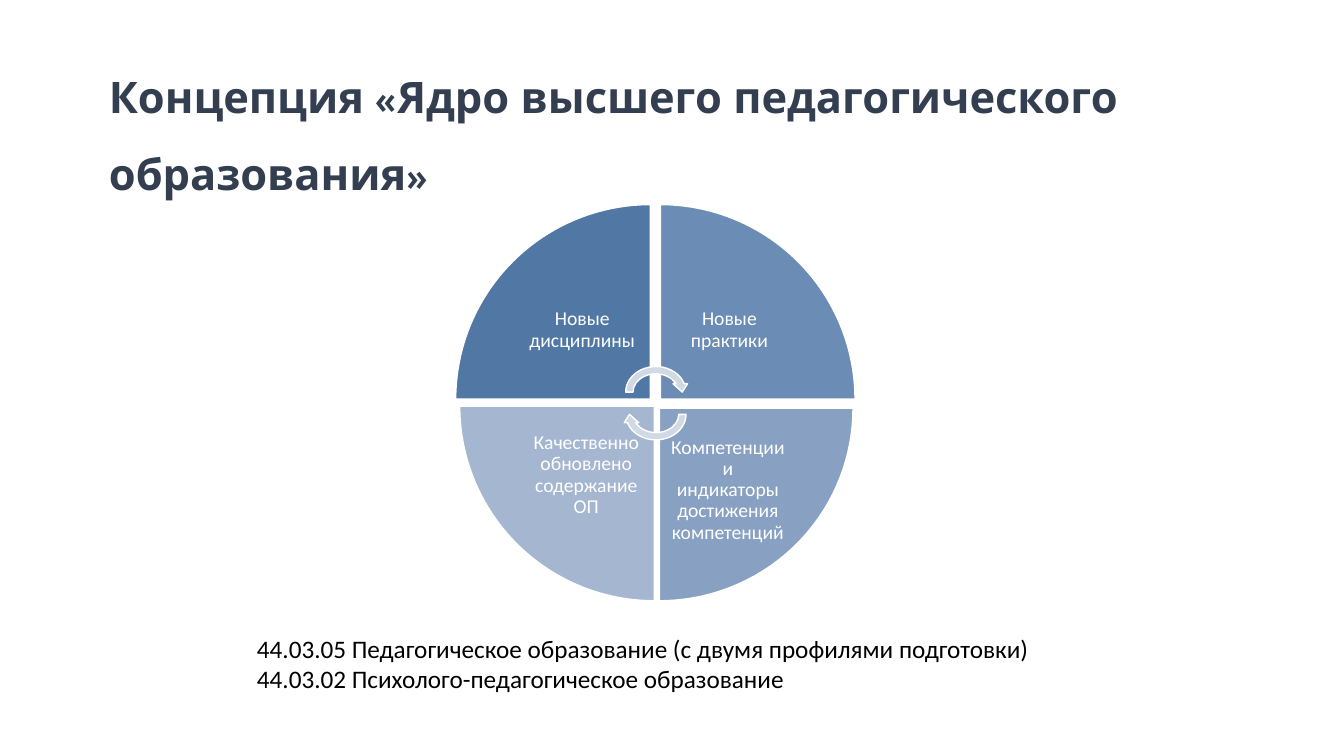
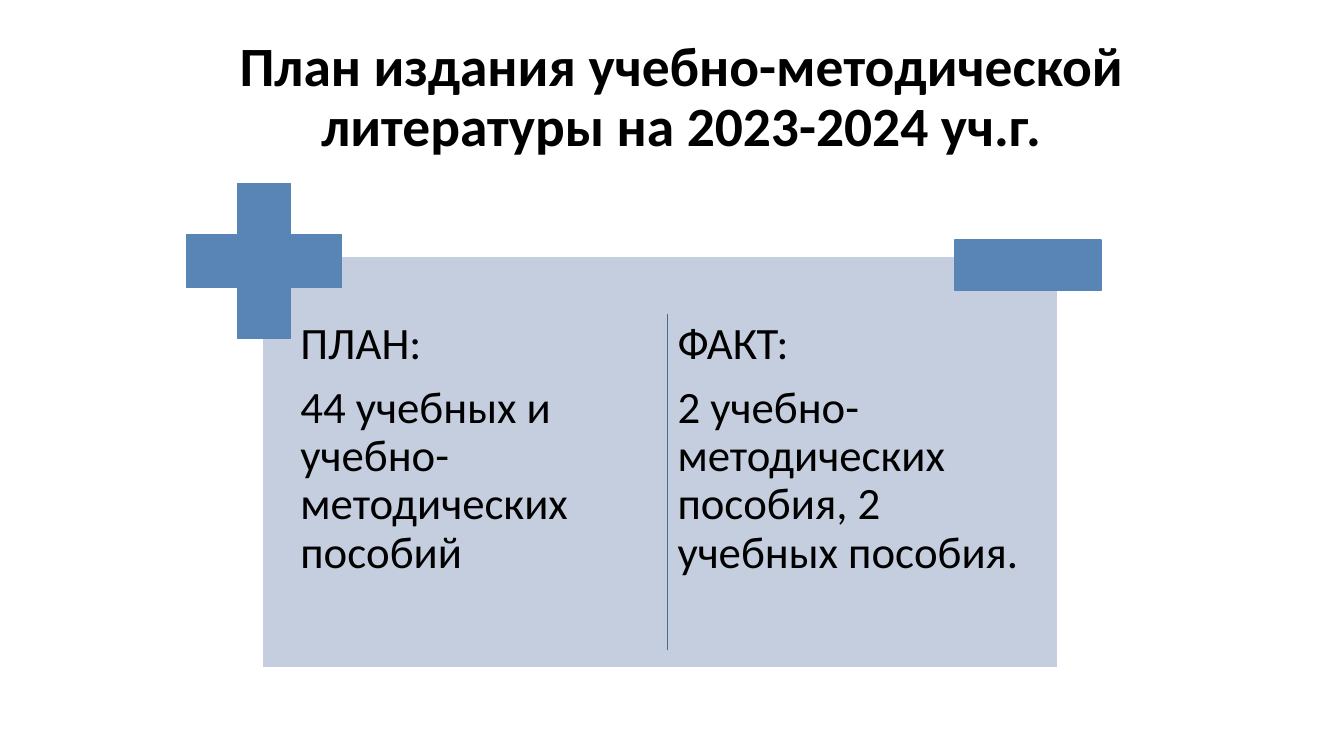
import pptx
import pptx.util
import pptx.dml.color
import pptx.enum.shapes
import pptx.enum.text
from dataclasses import dataclass, field
from lxml import etree

Inches = pptx.util.Inches
Pt = pptx.util.Pt
RGB = pptx.dml.color.RGBColor.from_string
Kind = pptx.enum.shapes.MSO_SHAPE
Align = pptx.enum.text.PP_ALIGN
Anchor = pptx.enum.text.MSO_ANCHOR
Box = tuple[float, float, float, float]


# Colours, fonts and type sizes
@dataclass(frozen=True)
class Theme:
    white: str = "FFFFFF"
    black: str = "000000"
    navy: str = "333F50"
    steel: str = "5984B6"
    panel: str = "C4CEDE"
    arrow: str = "D1D9E5"
    rule: str = "476A92"
    wedges: tuple[str, ...] = ("5178A5", "6B8CB5", "88A0C2", "A5B6D0")
    body: str = "Calibri"
    head: str = "League Spartan"
    label: float = 14
    note: float = 18
    large: float = 32
    title: float = 31
    plan: float = 39.6


THEME = Theme()


@dataclass(frozen=True)
class Style:
    size: float
    color: str = THEME.black
    face: str = THEME.body
    bold: bool = False
    inset: tuple[float, float] = (0.1, 0.05)
    anchor: Anchor = Anchor.TOP
    para: dict = field(default_factory=dict)


@dataclass(frozen=True)
class Wedge:
    box: Box
    area: Box
    text: str


TIGHT = {"line_spacing": 0.9}
LABEL = Style(THEME.label, THEME.white, inset=(0.11, 0.11), anchor=Anchor.MIDDLE,
              para=TIGHT | {"alignment": Align.CENTER, "space_after": Pt(5)})
LARGE = Style(THEME.large, inset=(0.07, 0.07), para=TIGHT | {"space_after": Pt(11)})
NOTE = Style(THEME.note)
HEAD = Style(THEME.title, THEME.navy, THEME.head, True, (0, 0),
             para={"line_spacing": Pt(54.8)})
PLAN = Style(THEME.plan, bold=True, anchor=Anchor.MIDDLE,
             para=TIGHT | {"alignment": Align.CENTER})

# Wedges run clockwise from the top left, a quarter turn each
WEDGES = [
    Wedge((4.52, 2.03, 1.93, 1.93), (5.09, 2.59, 1.37, 1.37), "Новые дисциплины"),
    Wedge((6.55, 2.03, 1.93, 1.93), (6.55, 2.59, 1.37, 1.37), "Новые практики"),
    Wedge((6.54, 4.05, 1.92, 1.91), (6.54, 4.19, 1.36, 1.35),
          "Компетенции и индикаторы достижения компетенций"),
    Wedge((4.56, 4.03, 1.93, 1.93), (5.13, 4.03, 1.37, 1.37),
          "Качественно обновлено содержание ОП"),
]


# Drawing helpers
def apply(target, values: dict) -> None:
    for name, value in values.items():
        setattr(target, name, value)


def place(box: Box) -> list:
    return [Inches(n) for n in box]


def shape(slide, kind: Kind, box: Box, fill: str, line: str = THEME.white,
          turn: float = 0):
    item = slide.shapes.add_shape(kind, *place(box))
    item.shadow.inherit = False
    item.rotation = turn
    item.fill.solid()
    item.fill.fore_color.rgb = RGB(fill)
    item.line.color.rgb = RGB(line)
    item.line.width = Pt(1)
    return item


def text(slide, box: Box, lines: list[str], style: Style) -> None:
    frame = slide.shapes.add_textbox(*place(box)).text_frame
    side, edge = (Inches(n) for n in style.inset)
    apply(frame, {"word_wrap": True, "vertical_anchor": style.anchor,
                  "margin_left": side, "margin_right": side,
                  "margin_top": edge, "margin_bottom": edge})
    for i, line in enumerate(lines):
        para = frame.add_paragraph() if i else frame.paragraphs[0]
        apply(para, style.para)
        run = para.add_run()
        run.text = line
        apply(run.font, {"size": Pt(style.size), "name": style.face,
                         "bold": style.bold})
        run.font.color.rgb = RGB(style.color)


def rule(slide, x: float, top: float, end: float, color: str) -> None:
    line = slide.shapes.add_connector(pptx.enum.shapes.MSO_CONNECTOR.STRAIGHT,
                                      *place((x, top, x, end)))
    line.line.color.rgb = RGB(color)
    line.line.width = Pt(1)
    etree.SubElement(line._element.spPr, pptx.oxml.ns.qn("a:effectLst"))


# Slides
def core(slide) -> None:
    for i, wedge in enumerate(WEDGES):
        shape(slide, Kind.PIE_WEDGE, wedge.box, THEME.wedges[i], turn=90 * i)
        text(slide, wedge.area, [wedge.text], LABEL)
    for top, turn in ((3.6, 0), (3.82, 180)):
        shape(slide, Kind.CIRCULAR_ARROW, (6.17, top, 0.67, 0.58), THEME.arrow,
              turn=turn)
    text(slide, (1.08, 0.45, 12.15, 1.54),
         ["Концепция «Ядро высшего педагогического образования»"], HEAD)
    text(slide, (2.45, 6.23, 9.4, 0.71),
         ["44.03.05 Педагогическое образование (с двумя профилями подготовки)",
          "44.03.02 Психолого-педагогическое образование"], NOTE)


def plan(slide) -> None:
    text(slide, (1.01, 0.63, 11.5, 0.69),
         ["План издания учебно-методической литературы на 2023-2024 уч.г."], PLAN)
    shape(slide, Kind.RECTANGLE, (2.6, 2.54, 7.89, 4.08), THEME.panel)
    for left, lines in (
        (2.91, ["ПЛАН:", "44 учебных и учебно-методических пособий"]),
        (6.65, ["ФАКТ:", "2 учебно-методических пособия, 2 учебных пособия."]),
    ):
        text(slide, (left, 3.11, 3.66, 3.49), lines, LARGE)
    # Plus and minus signs on the panel's corners
    plus = shape(slide, Kind.CROSS, (1.85, 1.82, 1.54, 1.54), THEME.steel, THEME.steel)
    plus.adjustments[0] = 0.33
    shape(slide, Kind.RECTANGLE, (9.47, 2.38, 1.45, 0.5), THEME.steel, THEME.steel)
    rule(slide, 6.62, 3.12, 6.45, THEME.rule)


def main() -> None:
    deck = pptx.Presentation()
    apply(deck, {"slide_width": Inches(13.33), "slide_height": Inches(7.5)})
    for draw in (core, plan):
        draw(deck.slides.add_slide(deck.slide_layouts[6]))
    deck.save("out.pptx")


if __name__ == "__main__":
    main()
